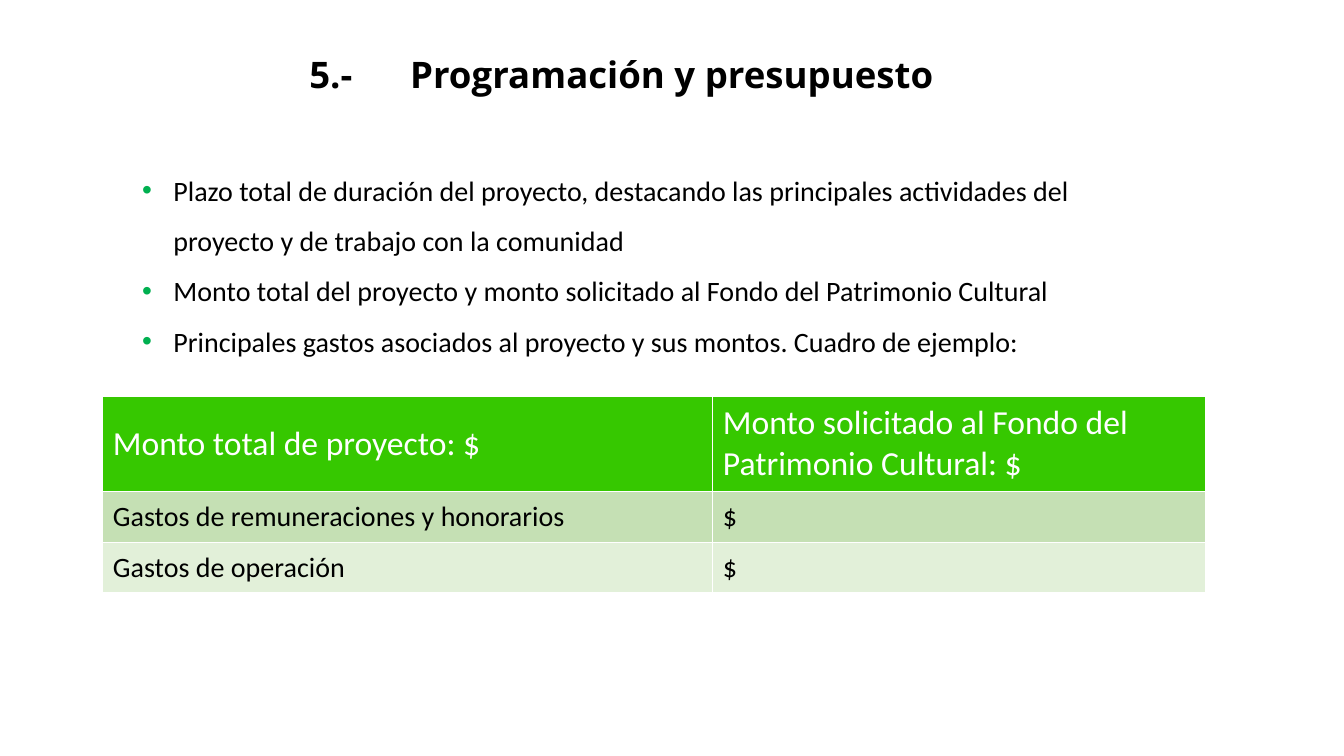
import pptx
import pptx.util
import pptx.dml.color
import pptx.enum.text
import pptx.oxml
import pptx.oxml.ns
from pptx.util import Inches

RGBColor = pptx.dml.color.RGBColor
BLACK = RGBColor(0x00, 0x00, 0x00)
WHITE = RGBColor(0xFF, 0xFF, 0xFF)
BULLET_GREEN = RGBColor(0x00, 0xB0, 0x50)
HEADER_GREEN = RGBColor(0x36, 0xC8, 0x00)
MID_GREEN = RGBColor(0xC5, 0xE0, 0xB4)
PALE_GREEN = RGBColor(0xE2, 0xF0, 0xD9)

TITLE = "5.-\tProgramación y presupuesto"
POINTS = [
    "Plazo total de duración del proyecto, destacando las principales actividades del "
    "proyecto y de trabajo con la comunidad",
    "Monto total del proyecto y monto solicitado al Fondo del Patrimonio Cultural",
    "Principales gastos asociados al proyecto y sus montos. Cuadro de ejemplo:",
]
BUDGET = [
    ("Monto total de proyecto: $", "Monto solicitado al Fondo del Patrimonio Cultural: $"),
    ("Gastos de remuneraciones y honorarios", "$"),
    ("Gastos de operación", "$"),
]
ROW_STYLES = [
    (0.95, HEADER_GREEN, WHITE, 24),
    (0.5, MID_GREEN, BLACK, 20),
    (0.5, PALE_GREEN, BLACK, 20),
]
COLUMN_WIDTHS = [6.05, 4.89]


def write(para, text, size=20, font="Calibri", color=BLACK, bold=False,
          align=pptx.enum.text.PP_ALIGN.LEFT, spacing=1.0):
    para.alignment = align
    para.line_spacing = spacing
    para.space_before = pptx.util.Pt(0)
    span = para.add_run()
    span.text = text
    span.font.size = pptx.util.Pt(size)
    span.font.name = font
    span.font.bold = bold
    span.font.color.rgb = color


def place(box, left, top, width, height):
    box.left, box.top = Inches(left), Inches(top)
    box.width, box.height = Inches(width), Inches(height)


def add_bullet(para):
    properties = para._p.get_or_add_pPr()
    properties.set("marL", str(Inches(0.31)))
    properties.set("indent", str(Inches(-0.31)))
    namespace = pptx.oxml.ns.nsdecls("a")
    for xml in (
        f'<a:buClr {namespace}><a:srgbClr val="{BULLET_GREEN}"/></a:buClr>',
        f'<a:buFont {namespace} typeface="Arial"/>',
        f'<a:buChar {namespace} char="•"/>',
    ):
        properties.append(pptx.oxml.parse_xml(xml))


def add_borders(cell):
    properties = cell._tc.get_or_add_tcPr()
    for side in "LRTB":
        properties.append(pptx.oxml.parse_xml(
            f'<a:ln{side} {pptx.oxml.ns.nsdecls("a")} w="12700">'
            f'<a:solidFill><a:srgbClr val="{WHITE}"/></a:solidFill></a:ln{side}>'))


def add_title(page):
    box = page.shapes.title
    place(box, 2.35, 0.16, 7.63, 1.21)
    box.text_frame.auto_size = pptx.enum.text.MSO_AUTO_SIZE.NONE
    box.text_frame.vertical_anchor = pptx.enum.text.MSO_ANCHOR.MIDDLE
    para = box.text_frame.paragraphs[0]
    para._p.get_or_add_pPr().set("defTabSz", str(Inches(1)))
    write(para, TITLE, size=26.1, font="Open Sans", bold=True,
          align=pptx.enum.text.PP_ALIGN.CENTER, spacing=0.9)


def add_points(page):
    box = page.placeholders[1]
    place(box, 1.31, 1.5, 10.09, 2.79)
    frame = box.text_frame
    frame.auto_size = pptx.enum.text.MSO_AUTO_SIZE.NONE
    frame.vertical_anchor = pptx.enum.text.MSO_ANCHOR.TOP
    for index, text in enumerate(POINTS):
        para = frame.add_paragraph() if index else frame.paragraphs[0]
        add_bullet(para)
        write(para, text, spacing=1.5)


def add_budget(page):
    height = sum(style[0] for style in ROW_STYLES)
    table = page.shapes.add_table(
        len(BUDGET), len(COLUMN_WIDTHS), Inches(1.02), Inches(3.93),
        Inches(sum(COLUMN_WIDTHS)), Inches(height)).table
    for column, width in zip(table.columns, COLUMN_WIDTHS):
        column.width = Inches(width)
    for row, texts, (row_height, fill, color, size) in zip(table.rows, BUDGET, ROW_STYLES):
        row.height = Inches(row_height)
        for cell, text in zip(row.cells, texts):
            add_borders(cell)
            cell.fill.solid()
            cell.fill.fore_color.rgb = fill
            cell.vertical_anchor = pptx.enum.text.MSO_ANCHOR.MIDDLE
            write(cell.text_frame.paragraphs[0], text, size=size, color=color)


def main():
    deck = pptx.Presentation()
    deck.slide_width, deck.slide_height = Inches(13.33), Inches(7.5)
    page = deck.slides.add_slide(deck.slide_layouts[1])
    add_title(page)
    add_points(page)
    add_budget(page)
    deck.save("out.pptx")


if __name__ == "__main__":
    main()
